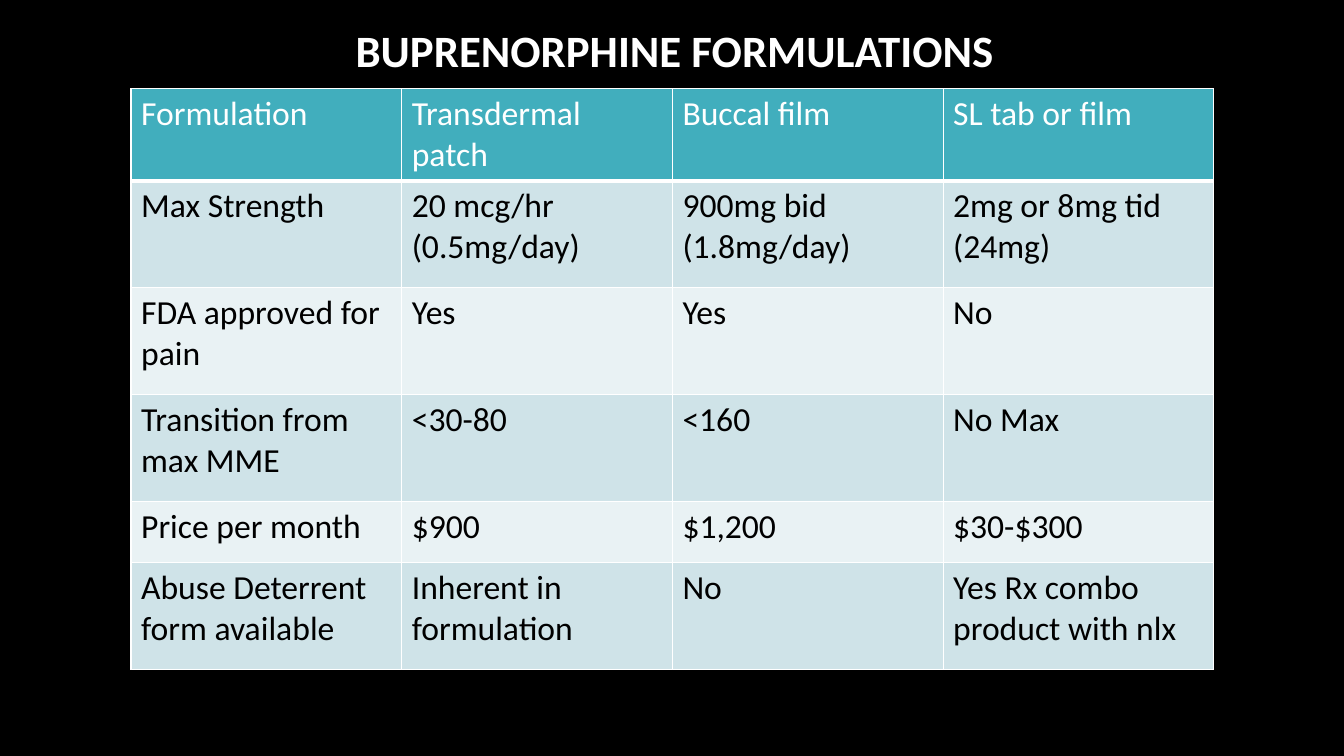
import lxml.etree
import pptx
import pptx.dml.color
import pptx.enum.text
import pptx.oxml.ns
import pptx.util

SLIDE_WIDTH, SLIDE_HEIGHT = 13.33, 7.5
TITLE_BOX = (1.46, 0.17, 10.57, 0.64)
TABLE_BOX = (1.3, 0.88, 10.74, 5.49)
HEADER_FILL, BAND_FILLS = "41AEBD", ("E9F2F4", "CFE3E8")
WHITE, BLACK = "FFFFFF", "000000"
ROW_HEIGHTS = (0.64, 1.06, 1.06, 1.06, 0.61, 1.06)
FORMULATIONS = (
    ("Formulation", "Transdermal patch", "Buccal film", "SL tab or film"),
    ("Max Strength", "20 mcg/hr (0.5mg/day)", "900mg bid (1.8mg/day)", "2mg or 8mg tid (24mg)"),
    ("FDA approved for pain", "Yes", "Yes", "No"),
    ("Transition from max MME", "<30-80", "<160", "No Max"),
    ("Price per month", "$900", "$1,200", "$30-$300"),
    ("Abuse Deterrent form available", "Inherent in formulation", "No", "Yes Rx combo product with nlx"),
)


def color(hex_value):
    """Turn a hex string into a colour."""
    return pptx.dml.color.RGBColor.from_string(hex_value)


def set_text(frame, text, ink, **formats):
    """Write one paragraph and apply its font formats."""
    frame.text = text
    font = frame.paragraphs[0].font
    for attribute, value in {"name": "Calibri", **formats}.items():
        setattr(font, attribute, value)
    font.color.rgb = color(ink)


def set_borders(cell, widths):
    """Draw white cell borders, with widths in points by side."""
    properties = cell._tc.get_or_add_tcPr()
    for position, (side, points) in enumerate(widths.items()):
        border = lxml.etree.Element(
            pptx.oxml.ns.qn("a:ln" + side), w=str(int(pptx.util.Pt(points)))
        )
        paint = lxml.etree.SubElement(border, pptx.oxml.ns.qn("a:solidFill"))
        lxml.etree.SubElement(paint, pptx.oxml.ns.qn("a:srgbClr"), val=WHITE)
        properties.insert(position, border)


def add_title(slide, box):
    """Place the slide title in its box."""
    title = slide.shapes.title
    for attribute, length in zip(("left", "top", "width", "height"), box):
        setattr(title, attribute, pptx.util.Inches(length))
    frame = title.text_frame
    frame.auto_size = pptx.enum.text.MSO_AUTO_SIZE.NONE
    frame.vertical_anchor = pptx.enum.text.MSO_ANCHOR.MIDDLE
    set_text(frame, "BUPRENORPHINE FORMULATIONS ", WHITE, size=pptx.util.Pt(32), bold=True)
    frame.paragraphs[0].alignment = pptx.enum.text.PP_ALIGN.CENTER


def add_formulation_table(slide, box):
    """Fill the box with the comparison of formulations."""
    column_count = len(FORMULATIONS[0])
    comparison = slide.shapes.add_table(
        len(FORMULATIONS), column_count, *map(pptx.util.Inches, box)
    ).table
    for column in comparison.columns:
        column.width = pptx.util.Inches(box[2] / column_count)
    for row_index, (entries, height) in enumerate(zip(FORMULATIONS, ROW_HEIGHTS)):
        comparison.rows[row_index].height = pptx.util.Inches(height)
        is_header = row_index == 0
        fill = HEADER_FILL if is_header else BAND_FILLS[row_index % 2]
        widths = {"L": 1, "R": 1, "T": 1, "B": 3 if is_header else 1}
        for column_index, entry in enumerate(entries):
            cell = comparison.cell(row_index, column_index)
            cell.fill.solid()
            cell.fill.fore_color.rgb = color(fill)
            set_borders(cell, widths)
            set_text(
                cell.text_frame, entry, WHITE if is_header else BLACK,
                size=pptx.util.Pt(24), bold=False,
            )


def main():
    """Build and save the slide."""
    deck = pptx.Presentation()
    deck.slide_width = pptx.util.Inches(SLIDE_WIDTH)
    deck.slide_height = pptx.util.Inches(SLIDE_HEIGHT)
    slide = deck.slides.add_slide(deck.slide_layouts.get_by_name("Title Only"))
    slide.background.fill.solid()
    slide.background.fill.fore_color.rgb = color(BLACK)
    add_formulation_table(slide, TABLE_BOX)
    add_title(slide, TITLE_BOX)
    deck.save("out.pptx")


if __name__ == "__main__":
    main()
